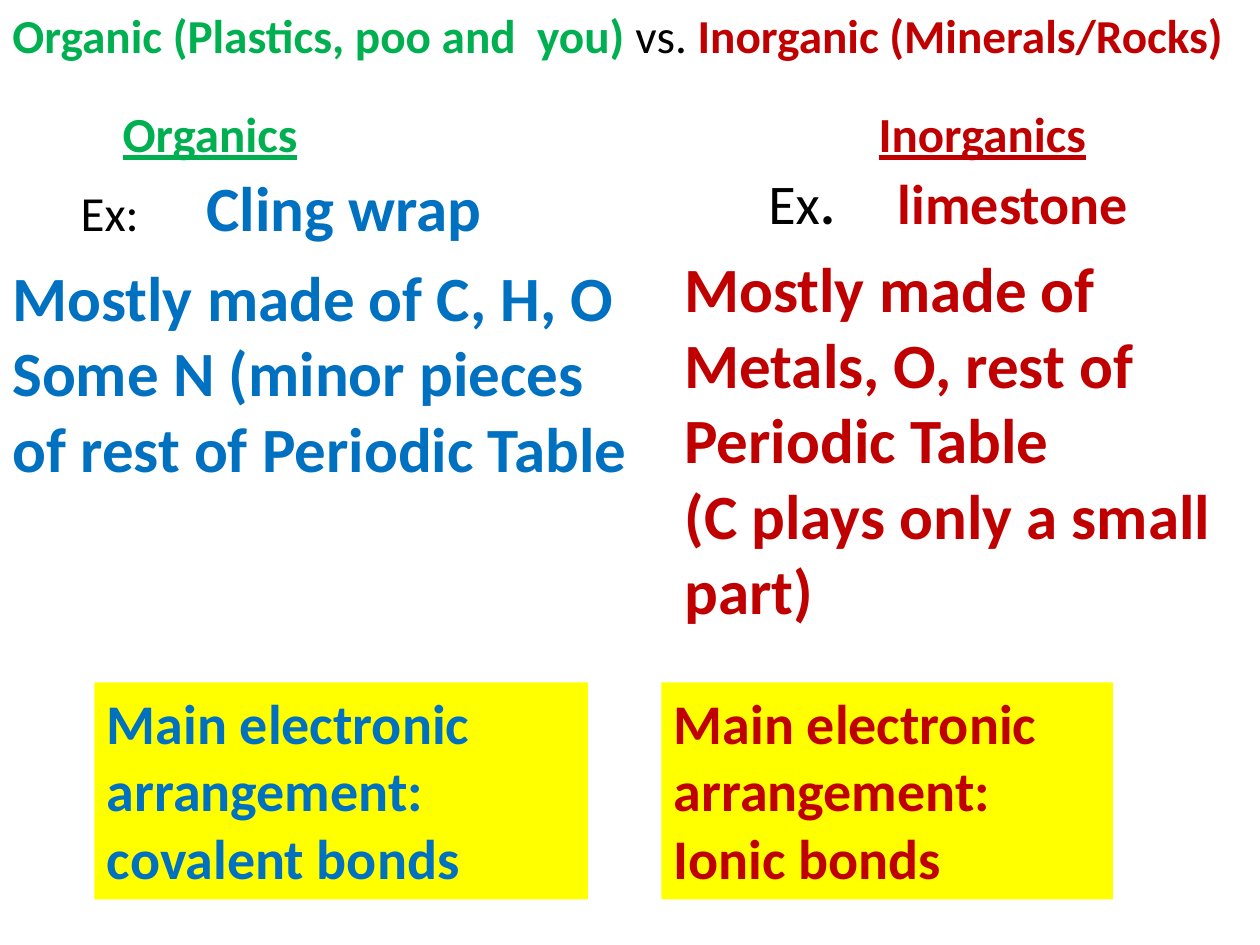
from pptx import Presentation
from pptx.dml.color import RGBColor
from pptx.enum.text import MSO_ANCHOR, PP_ALIGN
from pptx.oxml.ns import qn
from pptx.util import Pt
from lxml.etree import SubElement

FONT = "Calibri"
HEX = {"green": "00B050", "red": "C00000", "blue": "0070C0",
       "black": "000000", "yellow": "FFFF00"}

# Run: text, size, colour, style letters (b bold, u underline)
# Box: left, top, width, height, fill, tab stop, paragraphs of runs
BOXES = [
    (0, 0, 720, 40, None, None, [
        [("Organic (Plastics, poo and  you) ", 27, "green", "b"),
         ("vs. ", 27, "black", ""),
         ("Inorganic (Minerals/Rocks)", 27, "red", "b")]]),
    (63, 55.5, 618, 75, None, 432, [
        [("Organics", 28, "green", "bu"),
         ("\t", 28, "black", ""),
         ("Inorganics", 28, "red", "bu")]]),
    (384, 139, 336, 225, None, None, [
        [("Mostly made of Metals, O, rest of Periodic Table", 36, "red", "b")],
        [("(C plays only a small part)", 36, "red", "b")]]),
    (39, 93, 270, 51, None, 72, [
        [("Ex:", 28, "black", ""),
         ("\t", 18, "black", ""),
         ("Cling wrap", 36, "blue", "b")]]),
    (432, 93, 240, 46, None, 74, [
        [("Ex", 32, "black", ""),
         (".\t", 32, "black", "b"),
         ("limestone", 32, "red", "b")]]),
    (54, 390, 282, 124, "yellow", None, [
        [("Main electronic arrangement: covalent bonds", 32, "blue", "b")]]),
    (378, 390, 258, 124, "yellow", None, [
        [("Main electronic arrangement:", 32, "red", "b")],
        [("Ionic bonds", 32, "red", "b")]]),
    (0, 144, 378, 138, None, None, [
        [("Mostly made of C, H, O Some N (minor pieces of rest of "
          "Periodic Table", 36, "blue", "b")]]),
]


def color(name):
    return RGBColor.from_string(HEX[name])


def add_run(para, text, size, tint, style):
    run = para.add_run()
    run.text = text
    font = run.font
    font.name, font.size = FONT, Pt(size)
    font.color.rgb = color(tint)
    font.bold = "b" in style
    font.underline = "u" in style


def set_tab(para, stop):
    tabs = SubElement(para._p.get_or_add_pPr(), qn("a:tabLst"))
    SubElement(tabs, qn("a:tab"), pos=str(Pt(stop)), algn="l")


def add_box(slide, left, top, width, height, fill, stop, paras):
    box = slide.shapes.add_textbox(Pt(left), Pt(top), Pt(width), Pt(height))
    if fill:
        box.fill.solid()
        box.fill.fore_color.rgb = color(fill)
    frame = box.text_frame
    frame.word_wrap = True
    frame.vertical_anchor = MSO_ANCHOR.TOP
    for i, runs in enumerate(paras):
        para = frame.add_paragraph() if i else frame.paragraphs[0]
        para.alignment = PP_ALIGN.LEFT
        if stop:
            set_tab(para, stop)
        for run in runs:
            add_run(para, *run)


def main():
    deck = Presentation()
    deck.slide_width, deck.slide_height = Pt(720), Pt(540)
    slide = deck.slides.add_slide(deck.slide_layouts[6])
    for box in BOXES:
        add_box(slide, *box)
    deck.save("out.pptx")


if __name__ == "__main__":
    main()
